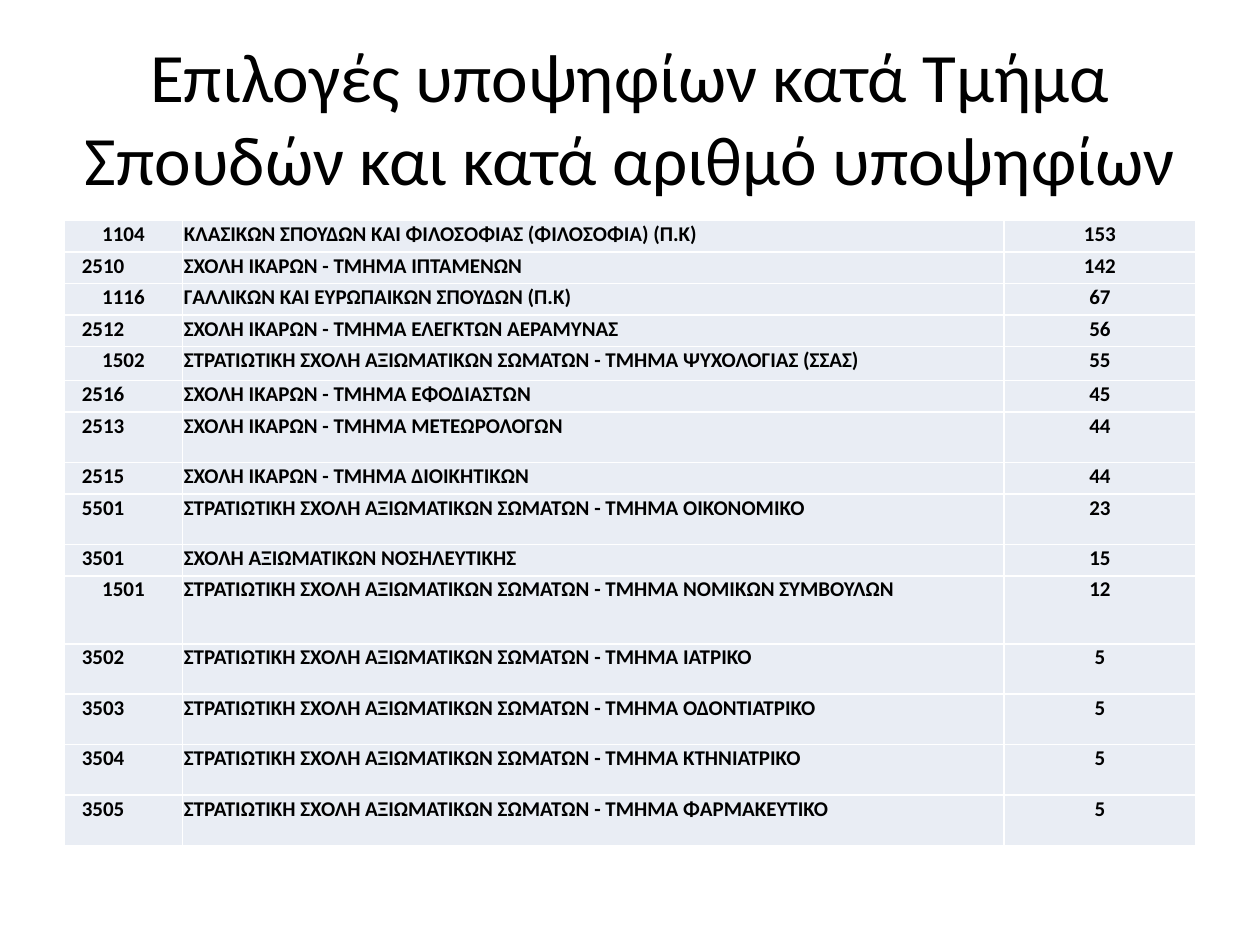
"""Build a slide listing candidates' choices by department of study."""
from typing import NamedTuple

from lxml import etree
from pptx import Presentation
from pptx import util as u
from pptx.dml.color import RGBColor
from pptx.enum import text
from pptx.oxml import ns

FONT = "Calibri"
BLACK, WHITE, PALE_BLUE = "000000", "FFFFFF", "E9EDF4"
COLUMN_WIDTHS = (0.94, 6.52, 1.52)
TITLE = "Επιλογές υποψηφίων κατά Τμήμα\vΣπουδών και κατά αριθμό υποψηφίων"
IKARON = "ΣΧΟΛΗ ΙΚΑΡΩΝ - ΤΜΗΜΑ "
OFFICERS = "ΣΤΡΑΤΙΩΤΙΚΗ ΣΧΟΛΗ ΑΞΙΩΜΑΤΙΚΩΝ ΣΩΜΑΤΩΝ - ΤΜΗΜΑ "


class Department(NamedTuple):
    code: str
    name: str
    candidates: int
    height: float = 0.25


DEPARTMENTS = (
    Department("1104", "ΚΛΑΣΙΚΩΝ ΣΠΟΥΔΩΝ ΚΑΙ ΦΙΛΟΣΟΦΙΑΣ (ΦΙΛΟΣΟΦΙΑ) (Π.Κ)", 153),
    Department("2510", IKARON + "ΙΠΤΑΜΕΝΩΝ", 142),
    Department("1116", "ΓΑΛΛΙΚΩΝ ΚΑΙ ΕΥΡΩΠΑΙΚΩΝ ΣΠΟΥΔΩΝ (Π.Κ)", 67),
    Department("2512", IKARON + "ΕΛΕΓΚΤΩΝ ΑΕΡΑΜΥΝΑΣ", 56),
    Department("1502", OFFICERS + "ΨΥΧΟΛΟΓΙΑΣ (ΣΣΑΣ)", 55, 0.27),
    Department("2516", IKARON + "ΕΦΟΔΙΑΣΤΩΝ", 45),
    Department("2513", IKARON + "ΜΕΤΕΩΡΟΛΟΓΩΝ", 44, 0.4),
    Department("2515", IKARON + "ΔΙΟΙΚΗΤΙΚΩΝ", 44),
    Department("5501", OFFICERS + "ΟΙΚΟΝΟΜΙΚΟ", 23, 0.4),
    Department("3501", "ΣΧΟΛΗ ΑΞΙΩΜΑΤΙΚΩΝ ΝΟΣΗΛΕΥΤΙΚΗΣ", 15),
    Department("1501", OFFICERS + "ΝΟΜΙΚΩΝ ΣΥΜΒΟΥΛΩΝ", 12, 0.54),
    Department("3502", OFFICERS + "ΙΑΤΡΙΚΟ", 5, 0.4),
    Department("3503", OFFICERS + "ΟΔΟΝΤΙΑΤΡΙΚΟ", 5, 0.4),
    Department("3504", OFFICERS + "ΚΤΗΝΙΑΤΡΙΚΟ", 5, 0.4),
    Department("3505", OFFICERS + "ΦΑΡΜΑΚΕΥΤΙΚΟ", 5, 0.4),
)


def colour(value: str) -> RGBColor:
    return RGBColor.from_string(value)


def style_paragraph(paragraph, size: float, centred: bool, bold: bool = False) -> None:
    paragraph.alignment = text.PP_ALIGN.CENTER if centred else text.PP_ALIGN.LEFT
    font = paragraph.font
    font.name, font.size, font.bold = FONT, u.Pt(size), bold
    font.color.rgb = colour(BLACK)


def add_borders(cell) -> None:
    properties = cell._tc.get_or_add_tcPr()
    for side in ("lnL", "lnR", "lnT", "lnB"):
        line = etree.SubElement(properties, ns.qn(f"a:{side}"), w=str(u.Pt(1)))
        fill = etree.SubElement(line, ns.qn("a:solidFill"))
        etree.SubElement(fill, ns.qn("a:srgbClr"), val=WHITE)


def fill_cell(cell, wording: str, centred: bool, indent: float = 0.01) -> None:
    cell.text = wording
    cell.margin_left = u.Inches(indent)
    cell.margin_right = cell.margin_top = u.Inches(0.01)
    cell.margin_bottom = 0
    style_paragraph(cell.text_frame.paragraphs[0], 12, centred, bold=True)
    add_borders(cell)
    cell.fill.solid()
    cell.fill.fore_color.rgb = colour(PALE_BLUE)


def add_title(slide) -> None:
    heading = slide.shapes.add_textbox(
        u.Inches(0.5), u.Inches(0.3), u.Inches(9), u.Inches(1.25)).text_frame
    heading.word_wrap = True
    heading.vertical_anchor = text.MSO_ANCHOR.MIDDLE
    heading.text = TITLE
    style_paragraph(heading.paragraphs[0], 39.6, centred=True)


def add_departments(slide) -> None:
    choices = slide.shapes.add_table(
        len(DEPARTMENTS), len(COLUMN_WIDTHS), u.Inches(0.51), u.Inches(1.75),
        u.Inches(sum(COLUMN_WIDTHS)),
        u.Inches(sum(department.height for department in DEPARTMENTS))).table
    choices.first_row = choices.horz_banding = False
    for column, width in zip(choices.columns, COLUMN_WIDTHS):
        column.width = u.Inches(width)
    for row, department in zip(choices.rows, DEPARTMENTS):
        row.height = u.Inches(department.height)
        code, name, candidates = row.cells
        centred = department.code.startswith("1")
        fill_cell(code, department.code, centred, 0.01 if centred else 0.14)
        fill_cell(name, department.name, centred=False)
        fill_cell(candidates, str(department.candidates), centred=True)


def main() -> None:
    deck = Presentation()
    deck.slide_width, deck.slide_height = u.Inches(10), u.Inches(7.5)
    slide = deck.slides.add_slide(deck.slide_layouts[6])
    add_title(slide)
    add_departments(slide)
    deck.save("out.pptx")


if __name__ == "__main__":
    main()
